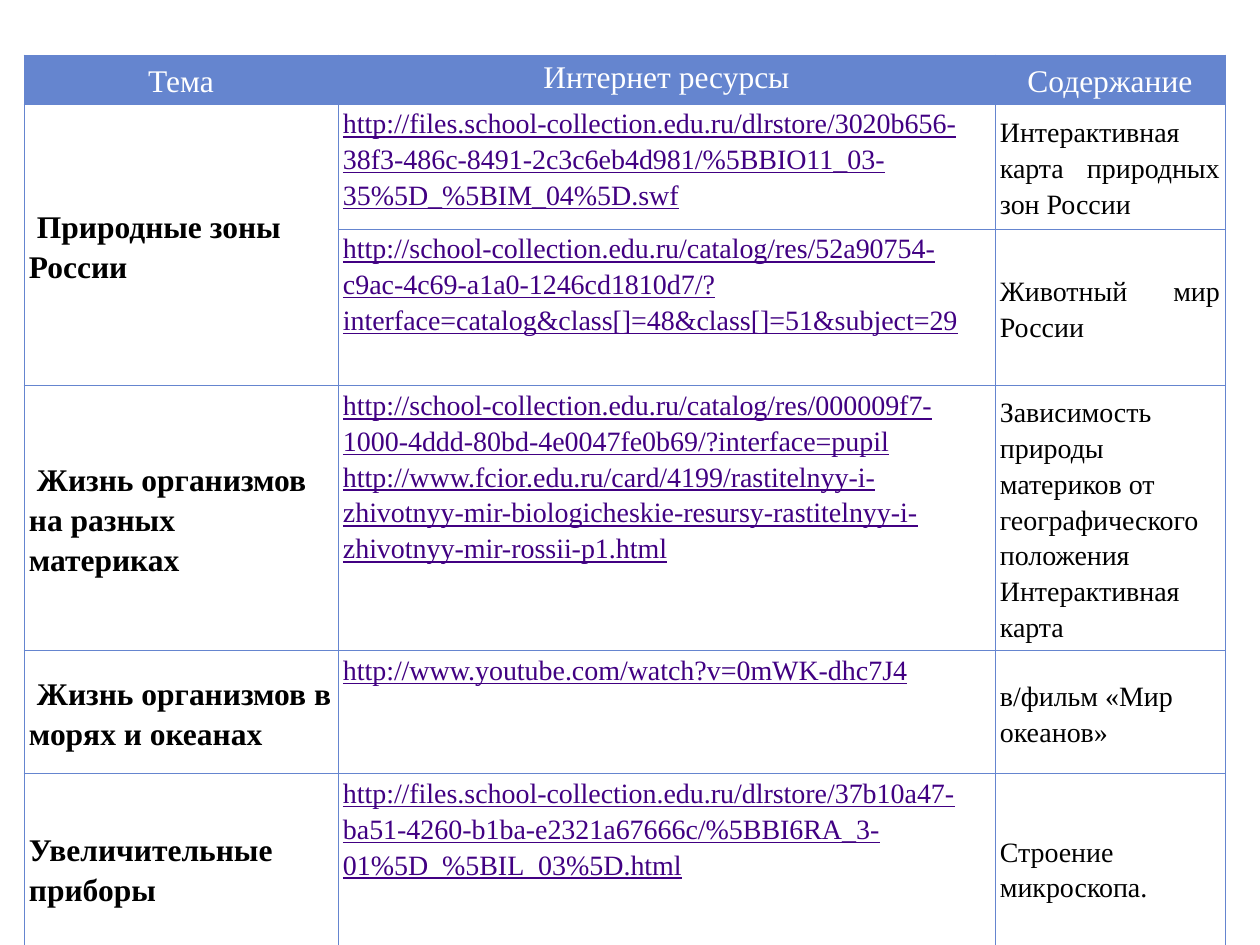
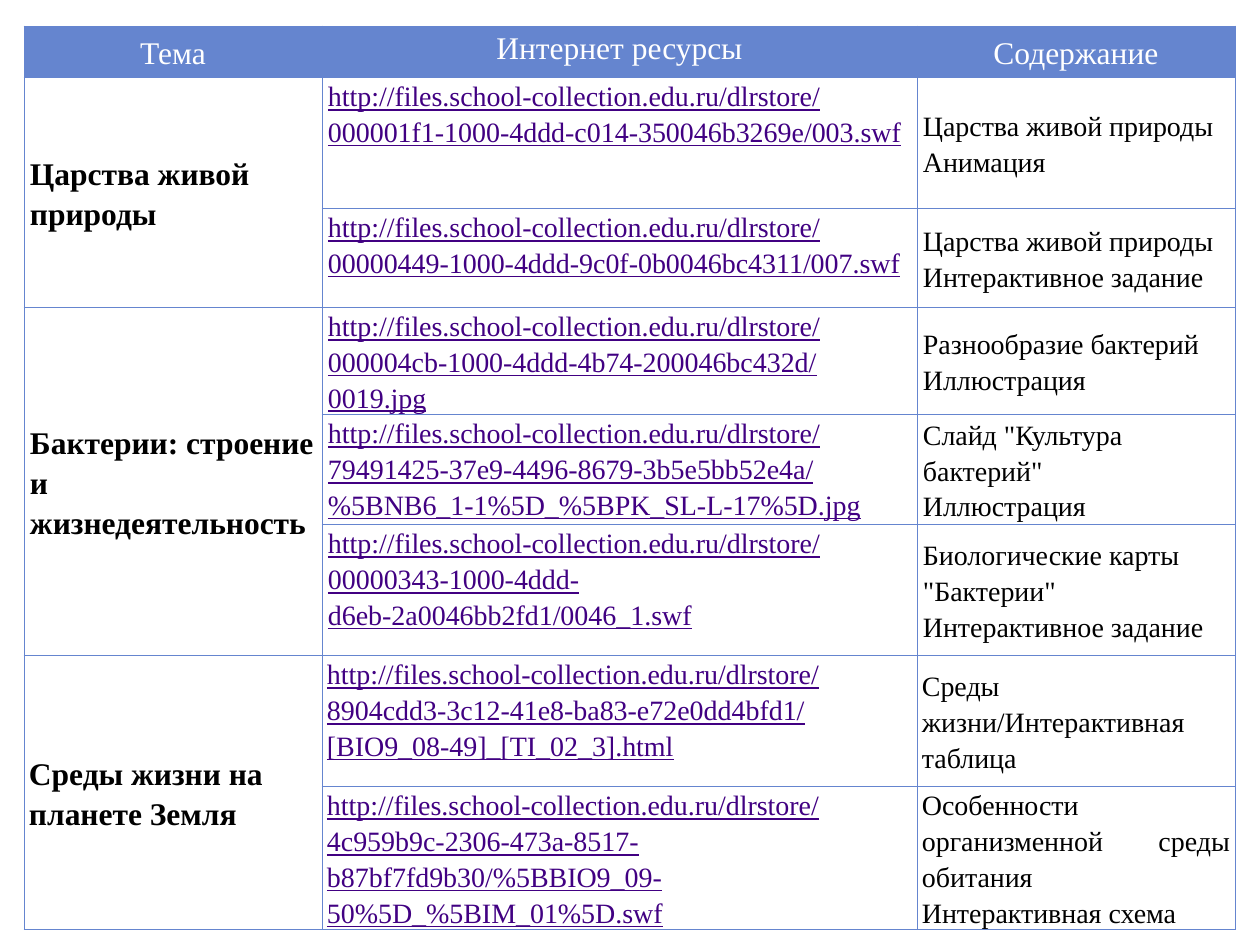
from dataclasses import dataclass

from lxml import etree
from pptx import Presentation
from pptx.dml.color import RGBColor
from pptx.enum.text import MSO_ANCHOR as Anchor, PP_ALIGN as Align
from pptx.oxml.ns import qn
from pptx.util import Pt

PX = 914400 // 126


@dataclass(frozen=True)
class Theme:
    font: str = "Times New Roman"
    accent: str = "6585CF"
    paper: str = "FFFFFF"
    ink: str = "000000"
    link: str = "410082"
    large: int = 18
    small: int = 16
    border: int = Pt(0.5)
    spacing: float = 1.15


theme = Theme()


def write_cell(cell, text, size=theme.small, color=theme.ink, bold=False, underline=False,
               align=Align.LEFT, anchor=Anchor.MIDDLE, inset=5, indent=0):
    cell.margin_left = cell.margin_right = inset * PX
    cell.margin_top = cell.margin_bottom = 0
    cell.vertical_anchor = anchor
    cell.text = text
    for paragraph in cell.text_frame.paragraphs:
        paragraph.alignment = align
        paragraph.line_spacing = theme.spacing
        if indent:
            paragraph._p.get_or_add_pPr().set("indent", str(indent * PX))
        for run in paragraph.runs:
            run.font.name = theme.font
            run.font.size = Pt(size)
            run.font.bold = bold
            run.font.underline = underline
            run.font.color.rgb = RGBColor.from_string(color)


def style_cell(cell, fill):
    properties = cell._tc.get_or_add_tcPr()
    for side in ("a:lnL", "a:lnR", "a:lnT", "a:lnB"):
        line = etree.SubElement(properties, qn(side), w=str(theme.border))
        solid = etree.SubElement(line, qn("a:solidFill"))
        etree.SubElement(solid, qn("a:srgbClr"), val=theme.accent)
    cell.fill.solid()
    cell.fill.fore_color.rgb = RGBColor.from_string(fill)


headings = ("Тема", "Интернет ресурсы", "Содержание")
store = "http://files.school-collection.edu.ru/dlrstore/"
catalog = "http://school-collection.edu.ru/catalog/res/"

# fmt: off
pages = [
    dict(left=24, top=55, columns=(314, 657, 230), header=49, topics=[
        ("Природные зоны России", 5, 8, [
            (125, store + "3020b656-38f3-486c-8491-2c3c6eb4d981/%5BBIO11_03-35%5D_%5BIM_04%5D.swf",
             "Интерактивная карта природных зон России", Align.JUSTIFY),
            (157, catalog + "52a90754-c9ac-4c69-a1a0-1246cd1810d7/?interface=catalog&class[]=48&class[]=51&subject=29",
             "Животный мир России", Align.JUSTIFY)]),
        ("Жизнь организмов на разных материках", 5, 8, [
            (265, catalog + "000009f7-1000-4ddd-80bd-4e0047fe0b69/?interface=pupil\n"
             "http://www.fcior.edu.ru/card/4199/rastitelnyy-i-zhivotnyy-mir-biologicheskie-resursy-"
             "rastitelnyy-i-zhivotnyy-mir-rossii-p1.html",
             "Зависимость природы материков от географического положения\nИнтерактивная карта",
             Align.LEFT)]),
        ("Жизнь организмов в морях и океанах", 5, 8, [
            (123, "http://www.youtube.com/watch?v=0mWK-dhc7J4", "в/фильм «Мир океанов»", Align.LEFT)]),
        ("Увеличительные приборы", 5, 0, [
            (189, store + "37b10a47-ba51-4260-b1ba-e2321a67666c/%5BBI6RA_3-01%5D_%5BIL_03%5D.html",
             "Строение микроскопа.", Align.LEFT)]),
    ]),
    dict(left=24, top=26, columns=(298, 595, 318), header=51, topics=[
        ("Царства живой природы", 6, 0, [
            (131, store + "000001f1-1000-4ddd-c014-350046b3269e/003.swf",
             "Царства живой природы\nАнимация", Align.LEFT),
            (99, store + "00000449-1000-4ddd-9c0f-0b0046bc4311/007.swf",
             "Царства живой природы\nИнтерактивное задание", Align.LEFT)]),
        ("Бактерии: строение и жизнедеятельность", 6, 0, [
            (101, store + "000004cb-1000-4ddd-4b74-200046bc432d/0019.jpg",
             "Разнообразие бактерий\nИллюстрация", Align.LEFT),
            (110, store + "79491425-37e9-4496-8679-3b5e5bb52e4a/%5BNB6_1-1%5D_%5BPK_SL-L-17%5D.jpg",
             'Слайд "Культура бактерий"\nИллюстрация', Align.LEFT),
            (131, store + "00000343-1000-4ddd-d6eb-2a0046bb2fd1/0046_1.swf",
             'Биологические карты "Бактерии"\nИнтерактивное задание', Align.LEFT)]),
        ("Среды жизни на планете Земля", 5, 0, [
            (131, store + "8904cdd3-3c12-41e8-ba83-e72e0dd4bfd1/[BIO9_08-49]_[TI_02_3].html",
             "Среды жизни/Интерактивная таблица", Align.JUSTIFY),
            (131, store + "4c959b9c-2306-473a-8517-b87bf7fd9b30/%5BBIO9_09-50%5D_%5BIM_01%5D.swf",
             "Особенности организменной среды обитания\nИнтерактивная схема", Align.JUSTIFY)]),
    ]),
]
# fmt: on

presentation = Presentation()
presentation.slide_width = 1260 * PX
presentation.slide_height = 945 * PX

for page in pages:
    slide = presentation.slides.add_slide(presentation.slide_layouts[6])
    heights = [page["header"]] + [row[0] for topic in page["topics"] for row in topic[3]]
    shape = slide.shapes.add_table(len(heights), len(headings), page["left"] * PX, page["top"] * PX,
                                   sum(page["columns"]) * PX, sum(heights) * PX)
    table = shape.table
    table.horz_banding = False
    for column, width in zip(table.columns, page["columns"]):
        column.width = width * PX
    for index, height in enumerate(heights):
        table.rows[index].height = height * PX
        for cell in table.rows[index].cells:
            style_cell(cell, theme.paper if index else theme.accent)

    for index, heading in enumerate(headings):
        write_cell(table.cell(0, index), heading, size=theme.large, color=theme.paper, inset=6,
                   align=Align.CENTER, anchor=Anchor.TOP if index == 1 else Anchor.MIDDLE)

    row_index = 1
    for title, inset, indent, resources in page["topics"]:
        topic_cell = table.cell(row_index, 0)
        if len(resources) > 1:
            topic_cell.merge(table.cell(row_index + len(resources) - 1, 0))
        write_cell(topic_cell, title, size=theme.large, bold=True, inset=inset, indent=indent)
        for height, address, content, align in resources:
            write_cell(table.cell(row_index, 1), address, color=theme.link, underline=True,
                       align=Align.JUSTIFY, anchor=Anchor.TOP, inset=inset)
            write_cell(table.cell(row_index, 2), content, align=align, inset=inset)
            row_index += 1

presentation.save("out.pptx")
